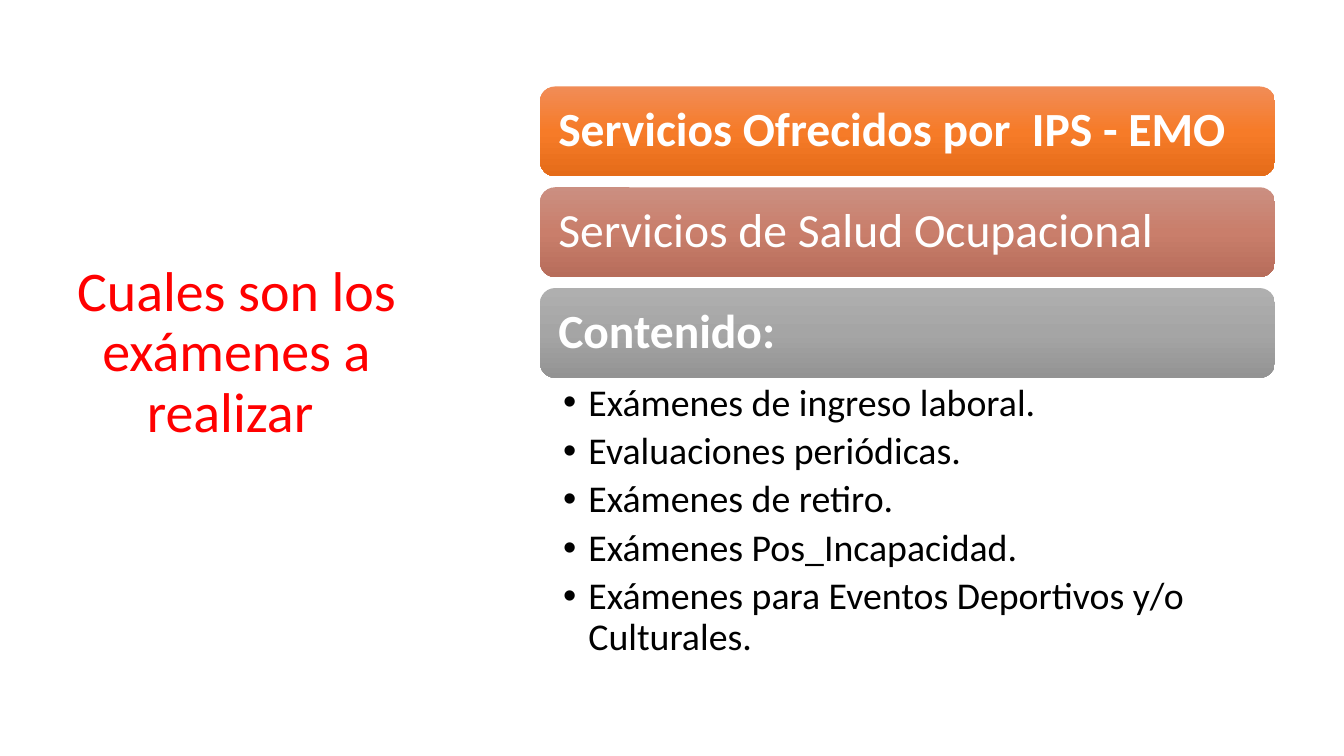
from copy import deepcopy

from pptx import Presentation
from pptx.dml.color import RGBColor
from pptx.enum.shapes import MSO_SHAPE
from pptx.enum.text import MSO_ANCHOR, MSO_AUTO_SIZE, PP_ALIGN
from pptx.oxml.ns import qn
from pptx.util import Cm, Pt

COLORS = {
    "title": "FF0000",
    "banner_text": "FFFFFF",
    "list_text": "000000",
    "orange": ("F18C57", "F67B28", "E56C19"),
    "terracotta": ("CB8F81", "C97E6B", "B76D5B"),
    "gray": ("AFAFAF", "A5A5A5", "939393"),
}
BANNERS = [
    ("Servicios Ofrecidos por  IPS - EMO", "orange", True),
    ("Servicios de Salud Ocupacional", "terracotta", False),
    ("Contenido:", "gray", True),
]
EXAMS = [
    "Exámenes de ingreso laboral.",
    "Evaluaciones periódicas.",
    "Exámenes de retiro.",
    "Exámenes Pos_Incapacidad.",
    "Exámenes para Eventos Deportivos y/o Culturales.",
]
COLUMN_LEFT, COLUMN_WIDTH = Cm(13.61), Cm(18.52)
BANNER_TOP, BANNER_HEIGHT, BANNER_PITCH = Cm(2.18), Cm(2.26), Cm(2.54)


def format_paragraph(paragraph, size, color, bold=False):
    paragraph.line_spacing = 0.9
    paragraph.space_before = Pt(0)
    paragraph.font.name = "Calibri"
    paragraph.font.size = Pt(size)
    paragraph.font.bold = bold
    paragraph.font.color.rgb = RGBColor.from_string(COLORS[color])


def fill_gradient(shape, colors):
    """Fill from top to bottom with three evenly spaced colours."""
    shape.fill.gradient()
    shape.fill.gradient_angle = 270
    stop_list = shape._element.spPr.find(qn("a:gradFill")).find(qn("a:gsLst"))
    stop_list.insert(1, deepcopy(stop_list[0]))
    for index, (stop, color) in enumerate(zip(shape.fill.gradient_stops, colors)):
        stop.position = index / 2
        stop.color.rgb = RGBColor.from_string(color)


presentation = Presentation()
presentation.slide_width, presentation.slide_height = Cm(33.87), Cm(19.05)
slide = presentation.slides.add_slide(presentation.slide_layouts[1])

title = slide.shapes.title
title.left, title.top, title.width, title.height = Cm(1.63), Cm(4.67), Cm(8.66), Cm(6.65)
title.text_frame.text = "Cuales son los exámenes a realizar "
title.text_frame.auto_size = MSO_AUTO_SIZE.NONE
title.text_frame.vertical_anchor = MSO_ANCHOR.BOTTOM
title.text_frame.paragraphs[0].alignment = PP_ALIGN.CENTER
format_paragraph(title.text_frame.paragraphs[0], 40, "title")

for index, (text, color, bold) in enumerate(BANNERS):
    banner = slide.shapes.add_shape(
        MSO_SHAPE.ROUNDED_RECTANGLE,
        COLUMN_LEFT, BANNER_TOP + index * BANNER_PITCH, COLUMN_WIDTH, BANNER_HEIGHT,
    )
    banner.shadow.inherit = False
    banner.line.fill.background()
    fill_gradient(banner, COLORS[color])
    frame = banner.text_frame
    frame.text = text
    frame.word_wrap = True
    frame.vertical_anchor = MSO_ANCHOR.MIDDLE
    frame.margin_left = frame.margin_right = Cm(0.35)
    frame.paragraphs[0].alignment = PP_ALIGN.LEFT
    format_paragraph(frame.paragraphs[0], 34, "banner_text", bold)

exam_list = slide.placeholders[1]
exam_list.left, exam_list.top = COLUMN_LEFT, Cm(9.53)
exam_list.width, exam_list.height = COLUMN_WIDTH, Cm(7.62)
frame = exam_list.text_frame
frame.text = "\n".join(EXAMS)
frame.auto_size = MSO_AUTO_SIZE.NONE
frame.vertical_anchor = MSO_ANCHOR.TOP
frame.margin_left, frame.margin_right = Cm(0.58), Cm(0.66)
frame.margin_top = frame.margin_bottom = Cm(0.13)
for paragraph in frame.paragraphs:
    format_paragraph(paragraph, 27, "list_text")
    paragraph.space_after = Pt(5.4)
    properties = paragraph._p.get_or_add_pPr()
    properties.set("marL", str(Cm(0.64)))
    properties.set("indent", str(-Cm(0.64)))

presentation.save("out.pptx")
